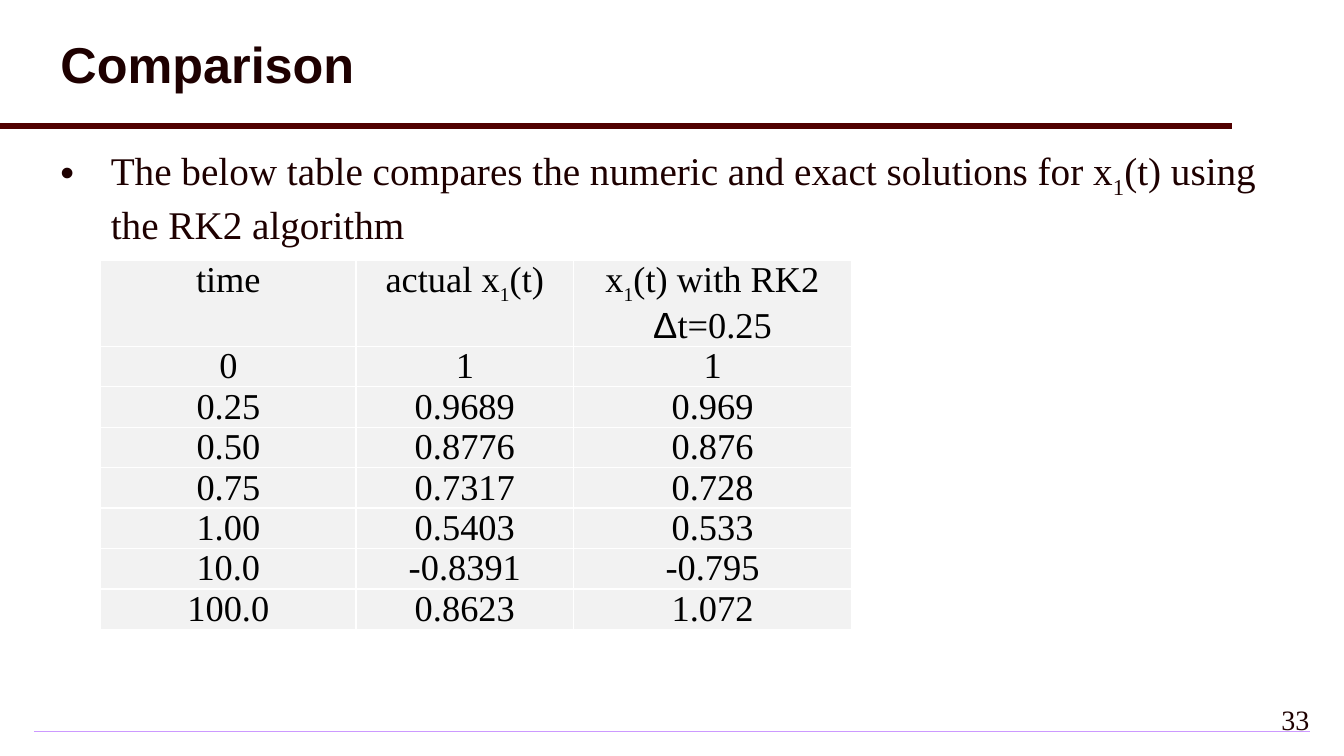
import lxml.etree
import pptx
import pptx.dml.color
import pptx.enum.shapes
import pptx.enum.text
import pptx.oxml.ns
import pptx.util

Cm = pptx.util.Cm
Pt = pptx.util.Pt
qn = pptx.oxml.ns.qn
ALIGN = pptx.enum.text.PP_ALIGN
ANCHOR = pptx.enum.text.MSO_ANCHOR

COLORS = {
    "ink": "1E0000", "rule": "500000", "table_text": "000000", "cell": "F2F2F2",
    "border": "FFFFFF", "footer_core": "CC99FF", "footer_edge": "F3EBFF",
}
SERIF = "Times New Roman"
TITLE_FONT = {"name": "Arial", "size": Pt(36), "bold": True}
BODY_FONT = {"name": SERIF, "size": Pt(28), "bold": False}
TABLE_FONT = {"name": SERIF, "size": Pt(26), "bold": False}
NUMBER_FONT = {"name": SERIF, "size": Pt(20), "bold": False}
FRAME = {"word_wrap": True, "auto_size": pptx.enum.text.MSO_AUTO_SIZE.NONE}
CELL_FORMAT = {"margin_left": Cm(0.18), "margin_right": Cm(0.18),
               "margin_top": 0, "margin_bottom": 0, "vertical_anchor": ANCHOR.TOP}
SUBSCRIPT = "-25000"

HEADINGS = [
    [[("time", {})]],
    [[("actual x", {}), ("1", {"size": Pt(24), "baseline": SUBSCRIPT}), ("(t)", {})]],
    [[("x", {}), ("1", {"size": Pt(24), "baseline": SUBSCRIPT}), ("(t) with RK2", {})],
     [("Δ", {"name": "Arial"}), ("t=0.25", {})]],
]
SOLUTIONS = [
    ("0", "1", "1"),
    ("0.25", "0.9689", "0.969"),
    ("0.50", "0.8776", "0.876"),
    ("0.75", "0.7317", "0.728"),
    ("1.00", "0.5403", "0.533"),
    ("10.0", "-0.8391", "-0.795"),
    ("100.0", "0.8623", "1.072"),
]


def rgb(role):
    """Return the colour that belongs to a role."""
    return pptx.dml.color.RGBColor.from_string(COLORS[role])


def set_format(target, values):
    """Set every attribute in values on target."""
    for attribute, value in values.items():
        setattr(target, attribute, value)


def add_xml(parent, tag, **attributes):
    """Append a DrawingML element and return it."""
    return lxml.etree.SubElement(parent, qn(tag), attributes)


def write(paragraph, pieces, base_font, color, **layout):
    """Write formatted pieces of text into a paragraph."""
    set_format(paragraph, {"space_before": Pt(0), **layout})
    for text, changes in pieces:
        font_format = {**base_font, **changes}
        baseline = font_format.pop("baseline", None)
        run = paragraph.add_run()
        run.text = text
        set_format(run.font, font_format)
        run.font.color.rgb = rgb(color)
        if baseline:
            run.font._element.set("baseline", baseline)


def add_rules(slide, left, top, width, height):
    """Draw the rule under the title and the thin footer bar."""
    title_rule = slide.shapes.add_connector(
        pptx.enum.shapes.MSO_CONNECTOR.STRAIGHT,
        left, top + Cm(3.18), left + Cm(31.04), top + Cm(3.18))
    title_rule.line.color.rgb = rgb("rule")
    title_rule.line.width = Pt(4)
    add_xml(title_rule._element.spPr, "a:effectLst")

    footer_bar = slide.shapes.add_shape(
        pptx.enum.shapes.MSO_SHAPE.RECTANGLE,
        left + Cm(0.85), top + height - Cm(0.64), width - Cm(1.7), Cm(0.03))
    footer_bar.shadow.inherit = False
    footer_bar.line.fill.background()
    footer_bar.fill.gradient()
    for stop, role in zip(footer_bar.fill.gradient_stops, ("footer_core", "footer_edge")):
        stop.color.rgb = rgb(role)
    gradient = footer_bar._element.spPr.find(qn("a:gradFill"))
    gradient.remove(gradient.find(qn("a:lin")))
    spread = add_xml(gradient, "a:path", path="shape")
    add_xml(spread, "a:fillToRect", l="50000", t="50000", r="50000", b="50000")


def fill_title(slide, left, top, width, height):
    """Place and write the slide title."""
    title = slide.shapes.title
    set_format(title, {"left": left, "top": top, "width": width, "height": height})
    set_format(title.text_frame, {**FRAME, "vertical_anchor": ANCHOR.MIDDLE})
    write(title.text_frame.paragraphs[0], [("Comparison", {})], TITLE_FONT, "ink",
          alignment=ALIGN.LEFT, line_spacing=0.9)


def fill_statement(slide, left, top, width, height):
    """Place and write the bulleted statement."""
    statement = slide.placeholders[1]
    set_format(statement, {"left": left, "top": top, "width": width, "height": height})
    set_format(statement.text_frame, FRAME)
    paragraph = statement.text_frame.paragraphs[0]
    bullet = paragraph._p.get_or_add_pPr()
    bullet.set("marL", str(Cm(1.27)))
    bullet.set("indent", str(-Cm(1.27)))
    add_xml(add_xml(bullet, "a:buClr"), "a:srgbClr", val=COLORS["ink"])
    add_xml(bullet, "a:buChar", char="•")
    pieces = [("The below table compares the numeric and exact solutions for x", {}),
              ("1", {"baseline": SUBSCRIPT}),
              ("(t) using the RK2 algorithm", {})]
    write(paragraph, pieces, BODY_FONT, "ink", alignment=ALIGN.LEFT)


def fill_cell(cell, lines):
    """Write centred lines into a cell with white borders."""
    set_format(cell, CELL_FORMAT)
    cell_format = cell._tc.get_or_add_tcPr()
    for side in ("a:lnL", "a:lnR", "a:lnT", "a:lnB"):
        border = add_xml(cell_format, side, w=str(Pt(1)))
        add_xml(add_xml(border, "a:solidFill"), "a:srgbClr", val=COLORS["border"])
    cell.fill.solid()
    cell.fill.fore_color.rgb = rgb("cell")
    for index, pieces in enumerate(lines):
        frame = cell.text_frame
        paragraph = frame.add_paragraph() if index else frame.paragraphs[0]
        write(paragraph, pieces, TABLE_FONT, "table_text", alignment=ALIGN.CENTER)


def add_solutions(slide, left, top, width, height):
    """Add the table of exact and numeric solutions."""
    rows = [HEADINGS] + [[[[(value, {})]] for value in row] for row in SOLUTIONS]
    solutions = slide.shapes.add_table(
        len(rows), len(HEADINGS), left, top, width, height).table
    set_format(solutions, {"first_row": False, "horz_banding": False})
    for column, share in zip(solutions.columns, (0.34, 0.29, 0.37)):
        column.width = int(width * share)
    heading_height = Cm(2.16)
    for index, row in enumerate(solutions.rows):
        row.height = (height - heading_height) // len(SOLUTIONS) if index else heading_height
        for cell, lines in zip(row.cells, rows[index]):
            fill_cell(cell, lines)


def add_page_number(slide, left, top, width, height):
    """Add the page number at the lower right."""
    page_number = slide.shapes.add_textbox(left, top, width, height)
    set_format(page_number.text_frame, FRAME)
    write(page_number.text_frame.paragraphs[0], [("33", {})], NUMBER_FONT, "ink",
          alignment=ALIGN.RIGHT)


def main():
    """Build the comparison slide and save it."""
    deck = pptx.Presentation()
    set_format(deck, {"slide_width": Cm(33.87), "slide_height": Cm(19.05)})
    slide = deck.slides.add_slide(deck.slide_layouts[1])
    add_rules(slide, 0, 0, deck.slide_width, deck.slide_height)
    fill_title(slide, Cm(1.27), Cm(0.2), Cm(31.04), Cm(2.98))
    fill_statement(slide, Cm(1.27), Cm(3.56), Cm(31.4), Cm(10.36))
    add_solutions(slide, Cm(2.54), Cm(6.56), Cm(18.92), Cm(9.3))
    add_page_number(slide, Cm(31.55), Cm(17.58), Cm(1.7), Cm(1.27))
    deck.save("out.pptx")


if __name__ == "__main__":
    main()
